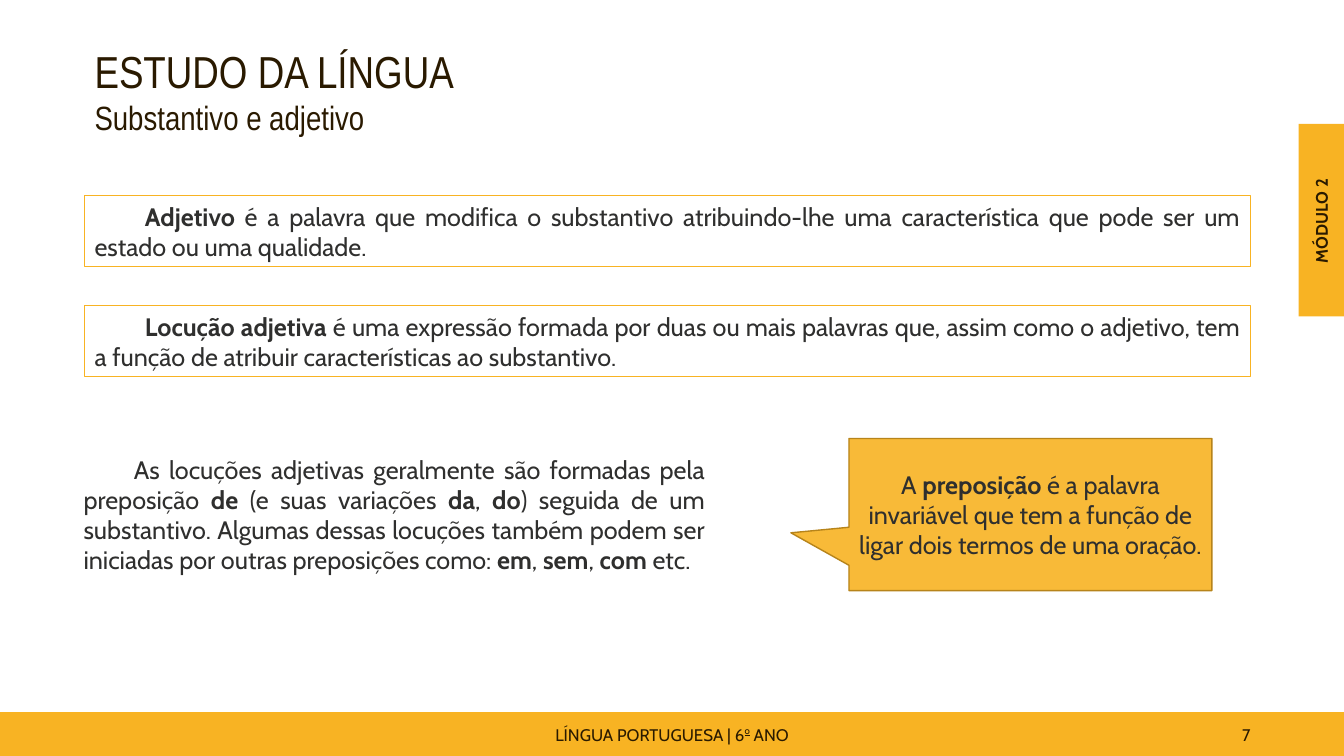
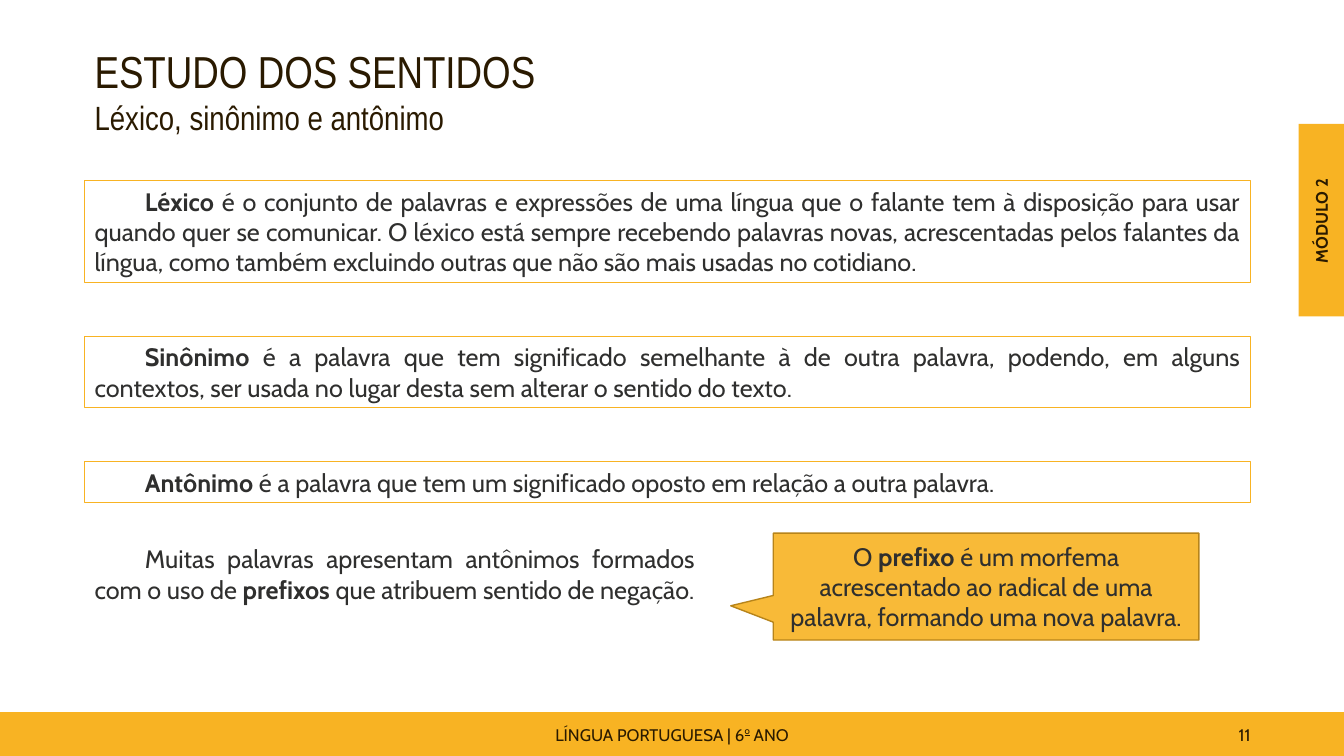
from dataclasses import dataclass

from lxml.etree import SubElement
from pptx import Presentation
from pptx.dml.color import RGBColor
from pptx.enum.shapes import MSO_SHAPE as Preset
from pptx.enum.text import MSO_ANCHOR as Anchor, MSO_AUTO_SIZE as AutoSize, PP_ALIGN as Align
from pptx.oxml.ns import qn
from pptx.util import Inches, Pt


@dataclass(frozen=True)
class Theme:
    band: RGBColor = RGBColor.from_string("F8B323")
    outline: RGBColor = RGBColor.from_string("B7841A")
    heading: RGBColor = RGBColor.from_string("2A1A00")
    body: RGBColor = RGBColor.from_string("2F2F2E")
    heading_font: str = "Arial Narrow"
    body_font: str = "Cabin"
    title_size: int = 32
    subtitle_size: int = 24
    body_size: int = 18
    footer_size: int = 12


def make_bold(run):
    run.font.bold = True


def make_ordinal(run):
    run.font.underline = True
    run.font._element.set("baseline", "45000")


class Deck:
    """Lengths are percentages of the slide's width and height."""

    LEFT, WIDTH = 6.3, 86.72
    LINE, PADDING = 4.02, 1.4

    def __init__(self, theme):
        self.theme = theme
        self.presentation = Presentation()
        self.presentation.slide_width = Inches(13.33)
        self.presentation.slide_height = Inches(7.5)
        self.slide = None

    def place(self, left, top, width, height):
        across = self.presentation.slide_width / 100
        down = self.presentation.slide_height / 100
        return [round(length) for length in
                (left * across, top * down, width * across, height * down)]

    def shape(self, box, fill=None, line=None, line_width=1, preset=Preset.RECTANGLE):
        shape = self.slide.shapes.add_shape(preset, *self.place(*box))
        shape.shadow.inherit = False
        for paint, color in ((shape.fill, fill), (shape.line.fill, line)):
            if color is None:
                paint.background()
            else:
                paint.solid()
                paint.fore_color.rgb = color
        if line is not None:
            shape.line.width = Pt(line_width)
        return shape

    def textbox(self, box):
        return self.slide.shapes.add_textbox(*self.place(*box))

    def frame(self, shape, anchor=Anchor.MIDDLE, grow=False):
        text_frame = shape.text_frame
        text_frame.word_wrap = True
        text_frame.vertical_anchor = anchor
        if grow:
            text_frame.auto_size = AutoSize.SHAPE_TO_FIT_TEXT
        return text_frame

    def add_text(self, paragraph, text, size, color, font=None, align=Align.LEFT, mark=make_bold):
        """Fill a paragraph; parts between asterisks get the mark."""
        paragraph.alignment = align
        for position, part in enumerate(text.split("*")):
            if not part:
                continue
            run = paragraph.add_run()
            run.text = part
            run.font.name = font or self.theme.body_font
            run.font.size = Pt(size)
            run.font.color.rgb = color
            if position % 2:
                mark(run)

    def footer_text(self, box, text, align):
        paragraph = self.frame(self.textbox(box)).paragraphs[0]
        paragraph.space_after = Pt(6)
        self.add_text(paragraph, text, self.theme.footer_size, self.theme.heading,
                      align=align, mark=make_ordinal)

    def module_tab(self, text):
        self.shape((96.62, 16.4, 3.38, 25.47), fill=self.theme.band)
        label = self.textbox((91.15, 27.2, 14.33, 4))
        label.rotation = 270
        self.add_text(self.frame(label, Anchor.TOP, grow=True).paragraphs[0], f"*{text}*",
                      self.theme.footer_size, self.theme.heading, align=Align.CENTER)

    def title(self, title, subtitle):
        theme = self.theme
        text_frame = self.frame(self.textbox((self.LEFT, 5.07, 46.14, 13.87)), Anchor.TOP, grow=True)
        self.add_text(text_frame.paragraphs[0], title, theme.title_size, theme.heading,
                      theme.heading_font)
        self.add_text(text_frame.add_paragraph(), subtitle, theme.subtitle_size, theme.heading,
                      theme.heading_font)

    def new_slide(self, title, subtitle, number):
        self.slide = self.presentation.slides.add_slide(self.presentation.slide_layouts[6])
        self.shape((0, 94.2, 100, 5.8), fill=self.theme.band)
        self.footer_text((33.12, 94.67, 33.76, 5.07), "LÍNGUA PORTUGUESA | 6*o* ANO", Align.CENTER)
        self.footer_text((70.67, 94.67, 23.11, 5.07), str(number), Align.RIGHT)
        self.module_tab("MÓDULO 2")
        self.title(title, subtitle)

    def height_of(self, lines):
        return self.PADDING + lines * self.LINE

    def indented_text(self, shape, text):
        paragraph = self.frame(shape, grow=True).paragraphs[0]
        properties = paragraph._p.get_or_add_pPr()
        properties.set("marL", "0")
        properties.set("indent", str(Inches(0.5)))
        self.add_text(paragraph, text, self.theme.body_size, self.theme.body, align=Align.JUSTIFY)

    def definitions(self, top, gap, entries):
        """Stack outlined boxes, each as tall as its number of lines."""
        for lines, text in entries:
            height = self.height_of(lines)
            box = self.shape((self.LEFT, top, self.WIDTH, height),
                             line=self.theme.band, line_width=0.75)
            self.indented_text(box, text)
            top += height + gap

    def remark(self, left, top, width, lines, text):
        self.indented_text(self.textbox((left, top, width, self.height_of(lines))), text)

    def callout(self, box, tip, text):
        shape = self.shape(box, self.theme.band, self.theme.outline,
                           preset=Preset.RECTANGULAR_CALLOUT)
        shape.adjustments[0], shape.adjustments[1] = tip
        color = shape._element.spPr.find(qn("a:solidFill")).find(qn("a:srgbClr"))
        SubElement(color, qn("a:alpha")).set("val", "90000")
        self.add_text(self.frame(shape).paragraphs[0], text, self.theme.body_size,
                      self.theme.body, align=Align.CENTER)


def adjective_slide(deck):
    deck.new_slide("ESTUDO DA LÍNGUA", "Substantivo e adjetivo", 7)
    deck.definitions(25.87, 5.1, [
        (2, "*Adjetivo* é a palavra que modifica o substantivo atribuindo-lhe uma "
            "característica que pode ser um estado ou uma qualidade."),
        (2, "*Locução adjetiva *é uma expressão formada por duas ou mais palavras que, assim "
            "como o adjetivo, tem a função de atribuir características ao substantivo."),
    ])
    deck.remark(5.48, 59.33, 47.71, 4,
                "As locuções adjetivas geralmente são formadas pela preposição *de* (e suas "
                "variações *da*, *do*) seguida de um substantivo. Algumas dessas locuções também "
                "podem ser iniciadas por outras preposições como: *em*, *sem*, *com* etc.")
    deck.callout((63.17, 58, 27, 20.13), (-0.66, 0.12),
                 "A *preposição* é a palavra invariável que tem a função de ligar dois termos "
                 "de uma oração.")


def meaning_slide(deck):
    deck.new_slide("ESTUDO DOS SENTIDOS", "Léxico, sinônimo e antônimo", 11)
    deck.definitions(23.87, 7.15, [
        (3, "*Léxico *é o conjunto de palavras e expressões de uma língua que o falante tem à "
            "disposição para usar quando quer se comunicar. O léxico está sempre recebendo "
            "palavras novas, acrescentadas pelos falantes da língua, como também excluindo "
            "outras que não são mais usadas no cotidiano."),
        (2, "*Sinônimo *é a palavra que tem significado semelhante à de outra palavra, podendo, "
            "em alguns contextos, ser usada no lugar desta sem alterar o sentido do texto."),
        (1, "*Antônimo* é a palavra que tem um significado oposto em relação a outra palavra."),
    ])
    deck.remark(deck.LEFT, 71.2, 46.14, 2,
                "Muitas palavras apresentam antônimos formados com o uso de *prefixos* que "
                "atribuem sentido de negação.")
    deck.callout((57.54, 70.53, 31.66, 14.13), (-0.6, 0.18),
                 "O *prefixo* é um morfema acrescentado ao radical de uma palavra, formando "
                 "uma nova palavra.")


def main():
    deck = Deck(Theme())
    adjective_slide(deck)
    meaning_slide(deck)
    deck.presentation.save("out.pptx")


if __name__ == "__main__":
    main()
